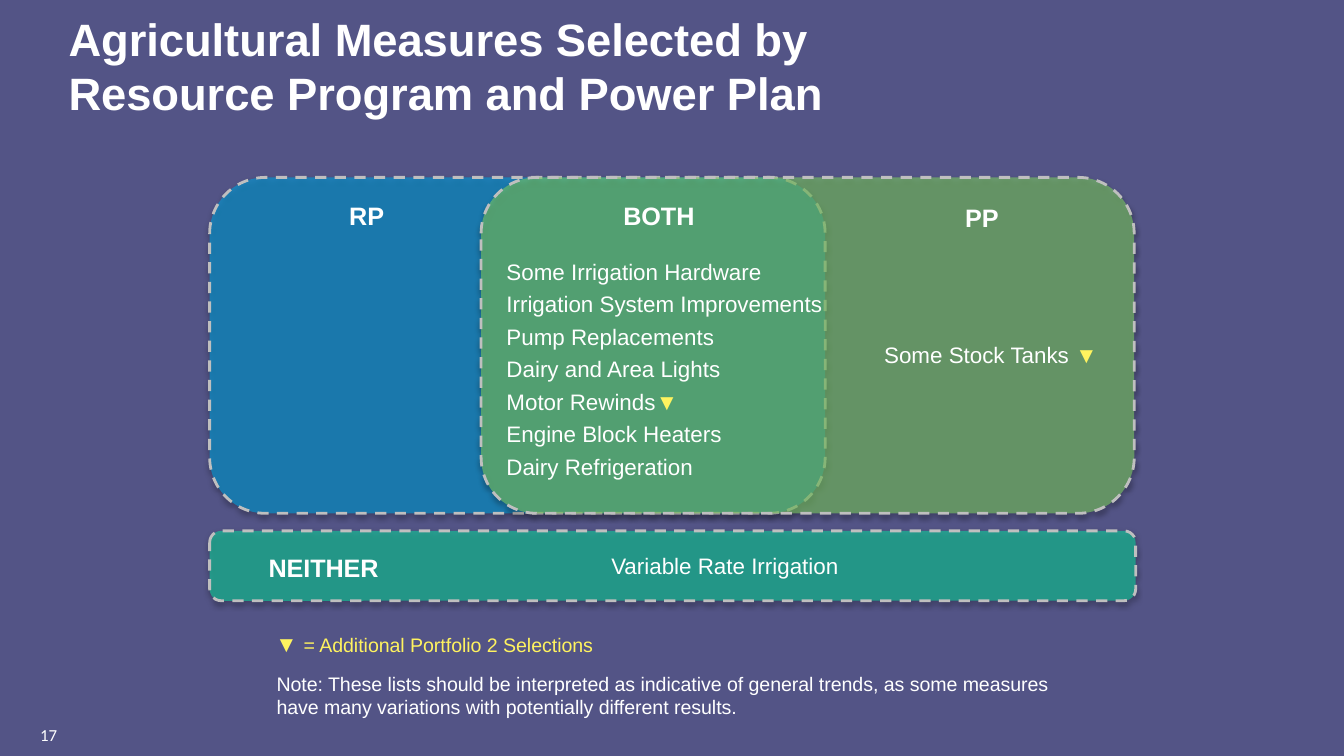
from lxml.etree import SubElement
from pptx import Presentation
from pptx.dml.color import RGBColor
from pptx.enum.dml import MSO_LINE
from pptx.enum.shapes import MSO_SHAPE as Shape
from pptx.enum.text import MSO_ANCHOR as Anchor, MSO_AUTO_SIZE as AutoSize, PP_ALIGN as Align
from pptx.oxml.ns import qn
from pptx.util import Inches, Pt

# Content
TITLE = "Agricultural Measures Selected by \vResource Program and Power Plan"
MARK = "▼"
BOTH_MEASURES = [  # words, marker, box width
    ("Some Irrigation Hardware", "", 2.11),
    ("Irrigation System Improvements", "", 2.57),
    ("Pump Replacements", "", 1.76),
    ("Dairy and Area Lights", "", 1.81),
    ("Motor Rewinds", MARK, 1.49),
    ("Engine Block Heaters", "", 1.81),
    ("Dairy Refrigeration", "", 1.6),
]
NOTE = ("Note: These lists should be interpreted as indicative of general trends, "
        "as some measures have many variations with potentially different results.")
COLORS = {"page": "535486", "text": "FFFFFF", "mark": "FFF35F", "outline": "BFBFBF",
          "shadow": "000000", "rp": "009DD9", "pp": "7CCA62", "neither": "10CF9B"}

# Grid, in inches
PAGE_WIDTH = 10
PAGE_HEIGHT = PAGE_WIDTH * 9 / 16
LEFT, TOP, HEIGHT = 1.56, 1.32, 2.5
PANELS = [  # left, top, width, height, colour
    (LEFT, TOP, 4.58, HEIGHT, "rp"),
    (3.58, TOP, 4.86, HEIGHT, "pp"),
    (LEFT, 3.95, 6.89, 0.52, "neither"),
]
HEADINGS = [  # words, left, top, width
    ("RP", 2.5, 1.44, 0.46),
    ("BOTH", 4.54, 1.44, 0.74),
    ("PP", 6.5, 1.46, 1.61),
    ("NEITHER", 1.9, 4.06, 1.03),
]
LIST_LEFT, LIST_TOP, LIST_LAST = 3.67, 1.87, 3.32
LIST_STEP = (LIST_LAST - LIST_TOP) / (len(BOTH_MEASURES) - 1)


def rgb(name):
    return RGBColor.from_string(COLORS[name])


def style(para, size, color="text", bold=False, font="Arial"):
    para.font.name, para.font.size, para.font.bold = font, Pt(size), bold
    para.font.color.rgb = rgb(color)


def add_panel(page, left, top, width, height, color):
    panel = page.shapes.add_shape(Shape.ROUNDED_RECTANGLE, *map(Inches, (left, top, width, height)))
    panel.fill.solid()
    panel.fill.fore_color.rgb = rgb(color)
    panel.line.color.rgb = rgb("outline")
    panel.line.width = Pt(1.5)
    panel.line.dash_style = MSO_LINE.DASH
    panel.shadow.inherit = False
    # Transparency and soft shadow
    props = panel.element.spPr
    fill_color = props.find(qn("a:solidFill")).find(qn("a:srgbClr"))
    SubElement(fill_color, qn("a:alpha"), val="60000")
    shadow = SubElement(props.find(qn("a:effectLst")), qn("a:outerShdw"), blurRad=str(Pt(3.1)),
                        dist=str(Pt(1.8)), dir="5400000", rotWithShape="0")
    shadow_color = SubElement(shadow, qn("a:srgbClr"), val=COLORS["shadow"])
    SubElement(shadow_color, qn("a:alpha"), val="35000")


def add_label(page, words, left, top, width, height=0.3, size=12, wrap=False, **look):
    box = page.shapes.add_textbox(*map(Inches, (left, top, width, height)))
    frame = box.text_frame
    frame.word_wrap = wrap
    frame.auto_size = AutoSize.SHAPE_TO_FIT_TEXT
    para = frame.paragraphs[0]
    para.add_run().text = words
    style(para, size, **look)
    return para


def add_mark(para, words, italic=True):
    span = para.add_run()
    span.text = words
    span.font.color.rgb = rgb("mark")
    span.font.italic = italic


deck = Presentation()
deck.slide_width, deck.slide_height = Inches(PAGE_WIDTH), Inches(PAGE_HEIGHT)
page = deck.slides.add_slide(deck.slide_layouts[5])
page.background.fill.solid()
page.background.fill.fore_color.rgb = rgb("page")

# Title
title = page.shapes.title
title.left, title.top, title.width, title.height = map(Inches, (0.41, 0.05, 9.49, 0.87))
title.text_frame.text = TITLE
title.text_frame.auto_size = AutoSize.NONE
title.text_frame.vertical_anchor = Anchor.MIDDLE
heading = title.text_frame.paragraphs[0]
heading.alignment = Align.LEFT
style(heading, 24.3, bold=True)

# Overlapping panels and their headings
for panel in PANELS:
    add_panel(page, *panel)
for words, left, top, width in HEADINGS:
    para = add_label(page, words, left, top, width, 0.33, 13.5, wrap=words == "PP", bold=True)
    if words == "PP":
        para.alignment = Align.CENTER

# Measures
for row, (words, mark, width) in enumerate(BOTH_MEASURES):
    para = add_label(page, words, LIST_LEFT, LIST_TOP + row * LIST_STEP, width)
    if mark:
        add_mark(para, mark, italic=False)
add_mark(add_label(page, "Some Stock Tanks", 6.48, 2.49, 1.81), " " + MARK)
add_label(page, "Variable Rate Irrigation", 4.45, 4.06, 1.9)

# Legend, note and page number
legend = add_label(page, MARK + " ", 1.95, 4.64, 2.62, color="mark")
legend.runs[0].font.italic = True
add_mark(legend, "= Additional Portfolio 2 Selections", italic=False)
legend.runs[1].font.size = Pt(10.5)
add_label(page, NOTE, 1.96, 4.95, 6.16, 0.45, 10.5, wrap=True)
add_label(page, "17", 0.2, 5.34, 0.75, 0.25, 9, wrap=True, font="Calibri")

deck.save("out.pptx")
